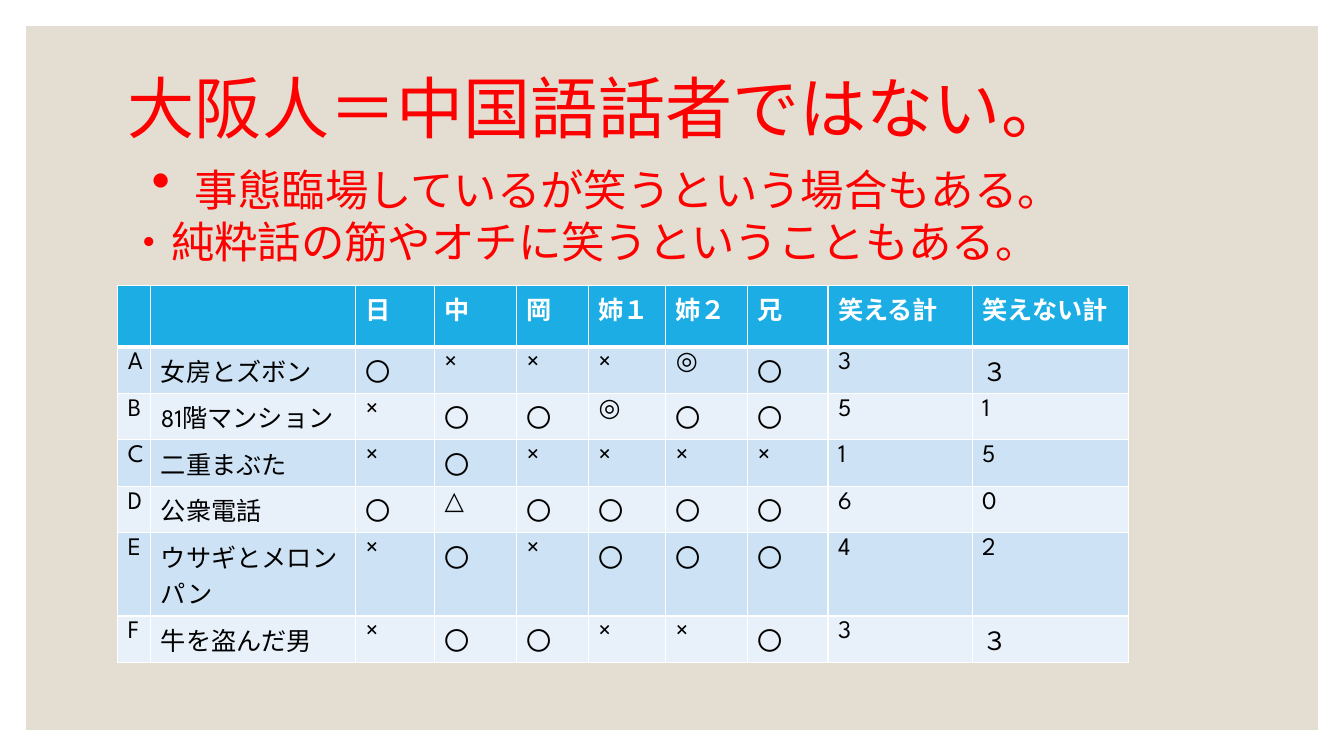
"""Build a slide on which jokes made each family member laugh."""
from lxml.etree import SubElement
from pptx import Presentation
from pptx.dml.color import RGBColor
from pptx.enum.shapes import MSO_SHAPE
from pptx.enum.text import MSO_ANCHOR
from pptx.oxml.ns import qn
from pptx.util import Pt

FONT = "League Spartan"
RED, WHITE, BLACK = "FF0000", "FFFFFF", "000000"
BEIGE, BLUE = "E3DED1", "1CADE4"
BANDS = ("CDE3F5", "E8F1FA")

HEADING = [
    [("大阪人＝中国語話者ではない。", 48)],
    [("・", 48), ("事態臨場しているが笑うという場合もある。", 31)],
    [("・純粋話の筋やオチに笑うということもある。", 31)],
]
ROWS = [
    ("", "", "日", "中", "岡", "姉１", "姉２", "兄", "笑える計", "笑えない計"),
    ("A", "女房とズボン", "〇", "×", "×", "×", "◎", "〇", "3", "３"),
    ("B", "81階マンション", "×", "〇", "〇", "◎", "〇", "〇", "5", "1"),
    ("C", "二重まぶた", "×", "〇", "×", "×", "×", "×", "1", "5"),
    ("D", "公衆電話", "〇", "△", "〇", "〇", "〇", "〇", "6", "0"),
    ("E", "ウサギとメロンパン", "×", "〇", "×", "〇", "〇", "〇", "4", "2"),
    ("F", "牛を盗んだ男", "×", "〇", "〇", "×", "×", "〇", "3", "３"),
]
COL_WIDTHS = (23.6, 146.4, 56.2, 58.8, 51.2, 55.2, 58.6, 57.3, 103, 111.7)
ROW_HEIGHTS = (44, 33.2, 33.2, 33.2, 33.2, 59.4, 33.2)
LEFT, TABLE_TOP = 84.2, 203.8
SLIDE_W, SLIDE_H, MARGIN = 960, 540, 18.7


def rgb(hex_color):
    return RGBColor.from_string(hex_color)


def add_run(p, text, size=18, color=BLACK, bold=False):
    r = p.add_run()
    r.text = text
    r.font.name, r.font.size, r.font.bold = FONT, Pt(size), bold
    r.font.color.rgb = rgb(color)


def add_borders(cell, bottom):
    tc_pr = cell._tc.get_or_add_tcPr()
    for i, (side, width) in enumerate((("lnL", 1), ("lnR", 1), ("lnT", 1), ("lnB", bottom))):
        ln = SubElement(tc_pr, qn(f"a:{side}"), w=str(Pt(width)))
        fill = SubElement(ln, qn("a:solidFill"))
        SubElement(fill, qn("a:srgbClr"), val=WHITE)
        tc_pr.insert(i, ln)


def add_backdrop(s):
    sp = s.shapes.add_shape(MSO_SHAPE.RECTANGLE, Pt(MARGIN), Pt(MARGIN),
                            Pt(SLIDE_W - 2 * MARGIN), Pt(SLIDE_H - 2 * MARGIN))
    sp.shadow.inherit = False
    sp.fill.solid()
    sp.fill.fore_color.rgb = rgb(BEIGE)
    sp.line.fill.background()


def add_heading(s):
    tf = s.shapes.add_textbox(Pt(LEFT), Pt(50.4), Pt(792), Pt(150)).text_frame
    tf.word_wrap = True
    tf.vertical_anchor = MSO_ANCHOR.TOP
    for i, line in enumerate(HEADING):
        p = tf.add_paragraph() if i else tf.paragraphs[0]
        p.line_spacing = 0.9
        for text, size in line:
            add_run(p, text, size=size, color=RED)


def add_score_table(s):
    table = s.shapes.add_table(len(ROWS), len(COL_WIDTHS), Pt(LEFT), Pt(TABLE_TOP),
                               Pt(sum(COL_WIDTHS)), Pt(sum(ROW_HEIGHTS))).table
    for col, width in zip(table.columns, COL_WIDTHS):
        col.width = Pt(width)
    for i, (row, height, texts) in enumerate(zip(table.rows, ROW_HEIGHTS, ROWS)):
        row.height = Pt(height)
        header = i == 0
        for cell, text in zip(row.cells, texts):
            cell.fill.solid()
            cell.fill.fore_color.rgb = rgb(BLUE if header else BANDS[(i - 1) % 2])
            add_borders(cell, bottom=3 if header else 1)
            if text:
                add_run(cell.text_frame.paragraphs[0], text,
                        color=WHITE if header else BLACK, bold=header)


def main():
    prs = Presentation()
    prs.slide_width, prs.slide_height = Pt(SLIDE_W), Pt(SLIDE_H)
    s = prs.slides.add_slide(prs.slide_layouts[6])
    add_backdrop(s)
    add_heading(s)
    add_score_table(s)
    prs.save("out.pptx")


if __name__ == "__main__":
    main()
